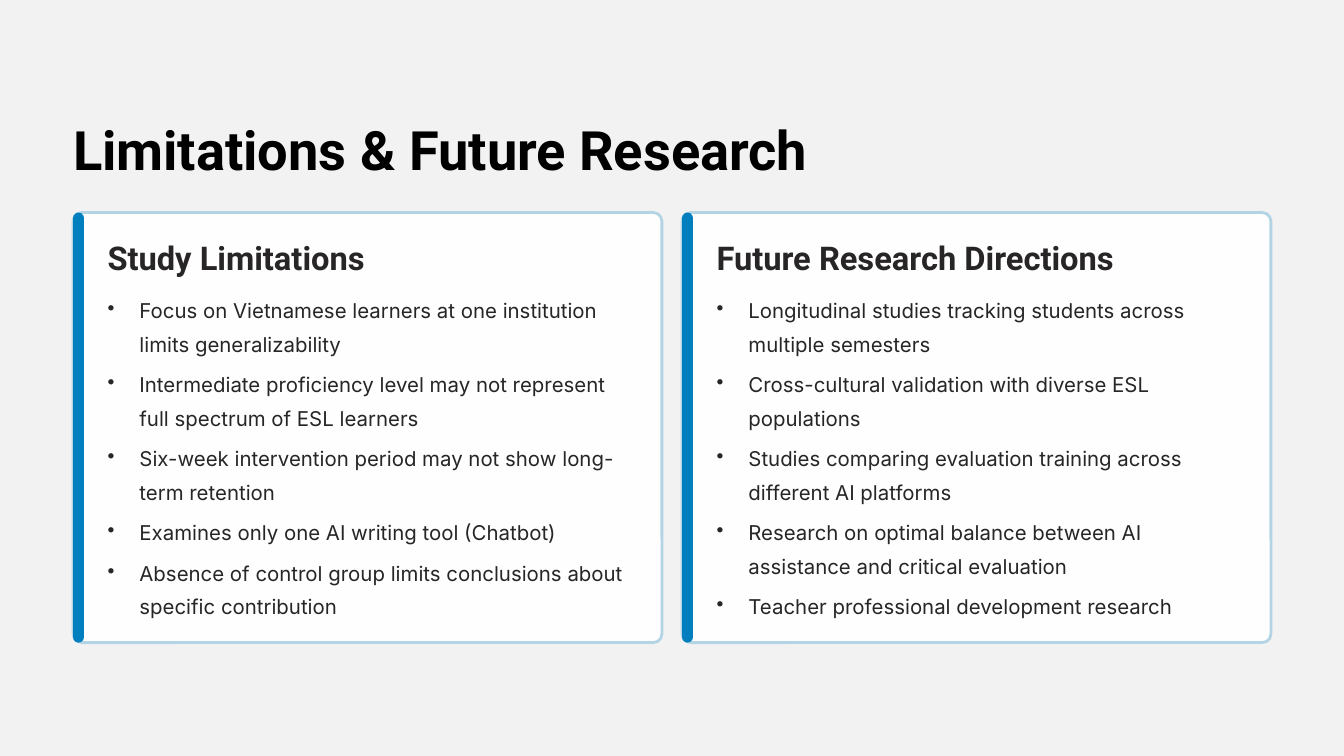
import pptx
import pptx.dml.color
import pptx.enum.shapes
import pptx.util
from dataclasses import dataclass
from lxml import etree

Pt = pptx.util.Pt
SHAPE = pptx.enum.shapes.MSO_SHAPE


def rgb(code):
    return pptx.dml.color.RGBColor.from_string(code)


@dataclass(frozen=True)
class Type:
    font: str
    size: float
    lead: float
    color: str
    bold: bool = False


@dataclass(frozen=True)
class Theme:
    page: str = "F2F2F2"
    card: str = "FEFEFE"
    edge: str = "B2D4E5"
    bar: str = "007EBD"
    title: Type = Type("Roboto", 46.5, 58.5, "000000", True)
    head: Type = Type("Roboto", 28, 35, "272525", True)
    body: Type = Type("Inter", 17.5, 28.5, "272525")
    line: float = 2.4
    gap: float = 6.4


class Deck:
    """Lengths are columns and rows of a 16 by 9 grid."""
    cols, rows = 16, 9

    def __init__(self, theme):
        self.theme = theme
        self.show = pptx.Presentation()
        self.show.slide_width = pptx.util.Inches(16)
        self.show.slide_height = pptx.util.Inches(9)
        self.slide = self.show.slides.add_slide(self.show.slide_layouts[6])
        fill = self.slide.background.fill
        fill.solid()
        fill.fore_color.rgb = rgb(theme.page)

    def col(self, count):
        return round(self.show.slide_width * count / self.cols)

    def row(self, count):
        return round(self.show.slide_height * count / self.rows)

    def area(self, x, y, w, h):
        return self.col(x), self.row(y), self.col(w), self.row(h)

    def panel(self, x, y, w, h, fill, bend, edge=None):
        """Rounded box; bend is the corner radius as a share of the short side."""
        box = self.slide.shapes.add_shape(
            SHAPE.ROUNDED_RECTANGLE, *self.area(x, y, w, h))
        box.shadow.inherit = False
        box.adjustments[0] = bend
        box.fill.solid()
        box.fill.fore_color.rgb = rgb(fill)
        if edge:
            box.line.color.rgb = rgb(edge)
            box.line.width = Pt(self.theme.line)
        else:
            box.line.fill.background()

    def text(self, x, y, w, h, lines, style, indent=0):
        """One paragraph per line; an indent turns the lines into bullets."""
        box = self.slide.shapes.add_textbox(*self.area(x, y, w, h))
        frame = box.text_frame
        frame.word_wrap = True
        frame.margin_left = frame.margin_right = 0
        frame.margin_top = frame.margin_bottom = 0
        for i, line in enumerate(lines):
            para = frame.add_paragraph() if i else frame.paragraphs[0]
            if indent:
                self.bullet(para, indent)
            para.line_spacing = Pt(style.lead)
            if i:
                para.space_before = Pt(self.theme.gap)
            run = para.add_run()
            run.text = line
            font = run.font
            font.name, font.size, font.bold = style.font, Pt(style.size), style.bold
            font.color.rgb = rgb(style.color)

    def bullet(self, para, indent):
        props = para._p.get_or_add_pPr()
        props.set("marL", str(self.col(indent)))
        props.set("indent", str(-self.col(indent)))
        mark = etree.SubElement(props, pptx.oxml.ns.qn("a:buChar"))
        mark.set("char", "•")

    def card(self, x, y, w, h, head, items):
        look = self.theme
        pad = 0.41
        wide = w - 0.7
        self.panel(x, y, w, h, look.card, 0.02, look.edge)
        self.panel(x, y, 0.13, h, look.bar, 0.5)
        self.text(x + pad, y + 0.28, wide, 0.49, [head], look.head)
        self.text(x + pad, y + 0.92, wide, 3.92, items, look.body, 0.38)


CARDS = [
    ("Study Limitations", [
        "Focus on Vietnamese learners at one institution limits generalizability",
        "Intermediate proficiency level may not represent full spectrum of ESL learners",
        "Six-week intervention period may not show long-term retention",
        "Examines only one AI writing tool (Chatbot)",
        "Absence of control group limits conclusions about specific contribution",
    ]),
    ("Future Research Directions", [
        "Longitudinal studies tracking students across multiple semesters",
        "Cross-cultural validation with diverse ESL populations",
        "Studies comparing evaluation training across different AI platforms",
        "Research on optimal balance between AI assistance and critical evaluation",
        "Teacher professional development research",
    ]),
]


def main():
    deck = Deck(Theme())
    left, wide, gap = 0.87, 7.01, 0.24
    deck.text(left, 1.35, 2 * wide + gap, 0.81,
              ["Limitations & Future Research"], deck.theme.title)
    for i, (head, items) in enumerate(CARDS):
        deck.card(left + i * (wide + gap), 2.53, wide, 5.12, head, items)
    deck.show.save("out.pptx")


if __name__ == "__main__":
    main()
